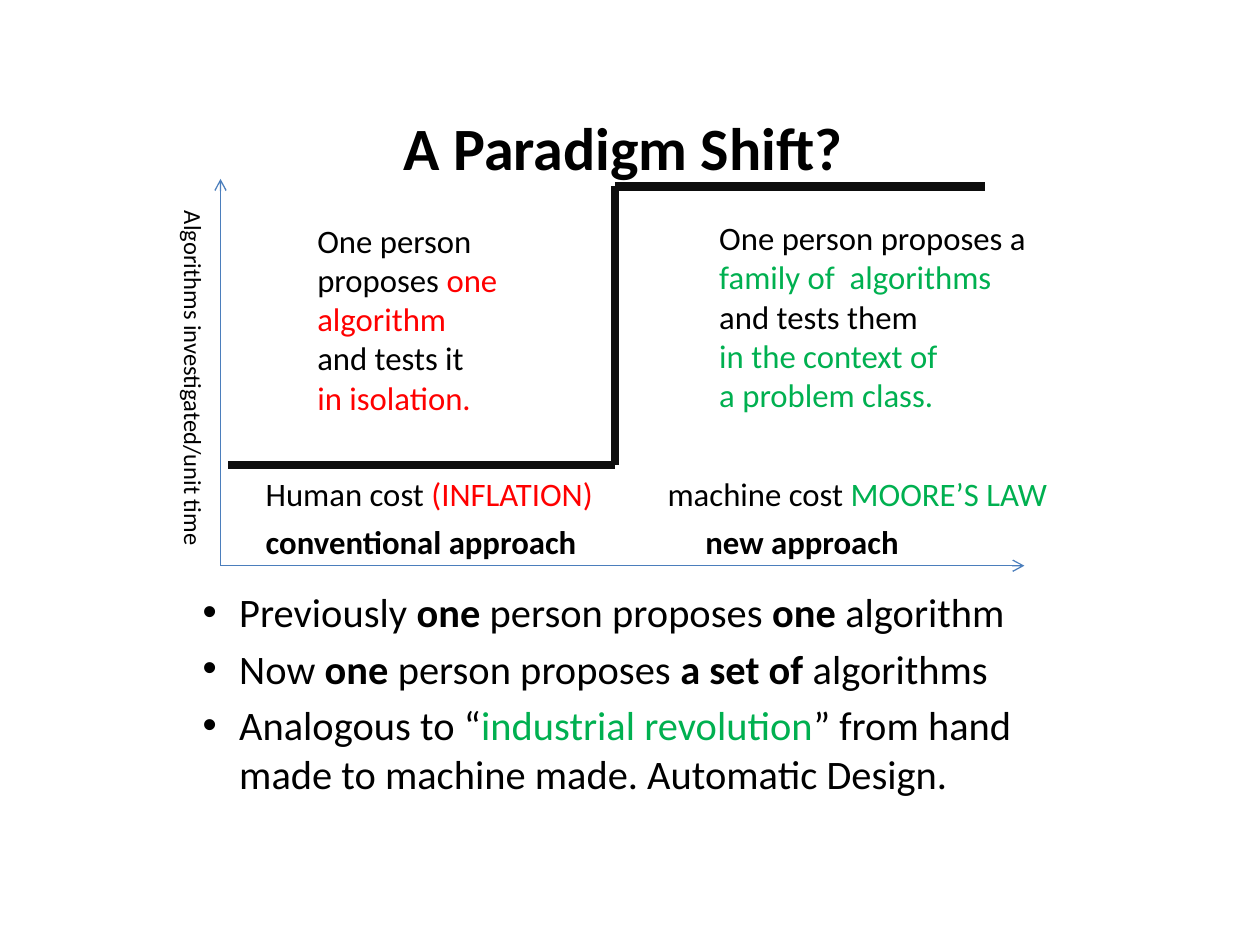
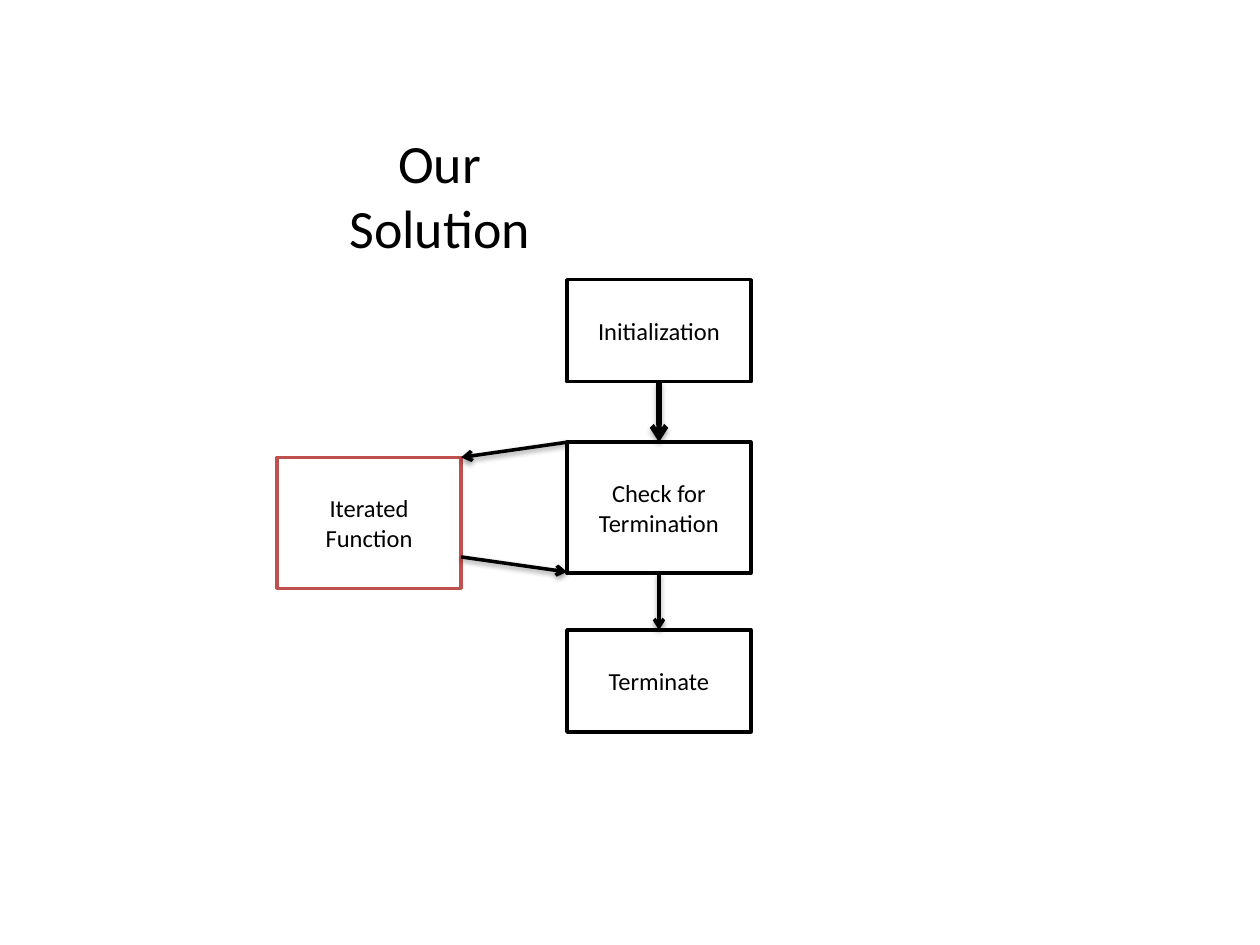
from dataclasses import dataclass

from lxml import etree
from pptx import Presentation
from pptx import util as u
from pptx.dml.color import RGBColor
from pptx.enum import shapes, text
from pptx.oxml import ns


@dataclass(frozen=True)
class Theme:
    font: str = "Calibri"
    black: str = "000000"
    white: str = "FFFFFF"
    red: str = "FF0000"
    green: str = "00B050"
    axis: str = "4B7EBC"
    step: str = "0D0D0D"
    accent: str = "C0504D"
    shift_title: float = 34.3
    solution_title: float = 30.8
    body: float = 23.1
    note: float = 18.7
    label: float = 14


THEME = Theme()
LEFT, CENTER = text.PP_ALIGN.LEFT, text.PP_ALIGN.CENTER
TOP, MIDDLE = text.MSO_ANCHOR.TOP, text.MSO_ANCHOR.MIDDLE

# Content: a paragraph is a list of (words, style), style being "", "bold", "red" or "green"
SHIFT_TITLE = [[("A Paradigm Shift?", "bold")]]
AXIS_LABEL = [[("Algorithms investigated/unit time", "")]]
CONVENTIONAL = [
    [("One person", "")],
    [("proposes ", ""), ("one", "red")],
    [("algorithm", "red")],
    [("and tests it", "")],
    [("in isolation.", "red")],
]
NEW = [
    [("One person proposes a", "")],
    [("family of  algorithms", "green")],
    [("and tests them", "")],
    [("in the context of", "green")],
    [("a problem class.", "green")],
]
COSTS = [[("Human cost ", ""), ("(INFLATION)", "red"),
          ("\tmachine cost ", ""), ("MOORE’S LAW", "green")]]
APPROACHES = [[("conventional approach\tnew approach", "bold")]]
POINTS = [
    [("Previously ", ""), ("one", "bold"), (" person proposes ", ""),
     ("one", "bold"), (" algorithm", "")],
    [("Now ", ""), ("one", "bold"), (" person proposes ", ""),
     ("a set of ", "bold"), ("algorithms", "")],
    [("Analogous to “", ""), ("industrial revolution", "green"),
     ("” from hand made to machine made. Automatic Design.", "")],
]

# Diagram geometry in inches
AXIS_ORIGIN, AXIS_RIGHT, AXIS_TOP = (1.75, 4.49), (8.13, 4.49), (1.75, 1.42)
STEP_POINTS = [(1.81, 3.69), (4.88, 3.69), (4.88, 1.48), (7.82, 1.48)]

SOLUTION_TITLE = [[("Our Solution", "")]]
BOX_WIDTH, MAIN_LEFT, LOOP_LEFT = 1.46, 4.5, 2.2
# Stage: left, top, height, outline
STAGES = {
    "Initialization": (MAIN_LEFT, 2.22, 0.81, THEME.black),
    "Check for Termination": (MAIN_LEFT, 3.51, 1.04, THEME.black),
    "Terminate": (MAIN_LEFT, 5, 0.81, THEME.black),
    "Iterated Function": (LOOP_LEFT, 3.63, 1.04, THEME.accent),
}
# Arrow: stage and fraction across and down its box at each end, weight, shadow (opacity %, distance)
FLOWS = [
    ("Initialization", (0.5, 1), "Check for Termination", (0.5, 0), 3, (35, 1.8)),
    ("Check for Termination", (0.5, 1), "Terminate", (0.5, 0), 2, (38, 1.6)),
    ("Check for Termination", (0, 0), "Iterated Function", (1, 0), 2, (38, 1.6)),
    ("Iterated Function", (1, 0.76), "Check for Termination", (0, 0.99), 2, (38, 1.6)),
]


def rgb(colour):
    return RGBColor.from_string(colour)


def add_xml(parent, tag, **attributes):
    return etree.SubElement(parent, ns.qn(tag), attributes)


def write(frame, paragraphs, size, align=LEFT, anchor=TOP, bullet=False, tab=None):
    frame.word_wrap = True
    frame.vertical_anchor = anchor
    for number, pieces in enumerate(paragraphs):
        para = frame.paragraphs[0] if number == 0 else frame.add_paragraph()
        para.alignment = align
        props = para._p.get_or_add_pPr()
        if bullet:
            indent = u.Inches(0.29)
            props.set("marL", str(indent))
            props.set("indent", str(-indent))
            para.space_before = u.Pt(size * 0.2)
            add_xml(props, "a:buFont", typeface="Arial")
            add_xml(props, "a:buChar", char="•")
        if tab:
            stops = add_xml(props, "a:tabLst")
            add_xml(stops, "a:tab", pos=str(u.Inches(tab)), algn="l")
        para.font.name = THEME.font
        para.font.size = u.Pt(size)
        para.font.color.rgb = rgb(THEME.black)
        for words, style in pieces:
            run = para.add_run()
            run.text = words
            if style == "bold":
                run.font.bold = True
            elif style:
                run.font.color.rgb = rgb(getattr(THEME, style))


def add_text(slide, area, paragraphs, size, rotation=0, **layout):
    box = slide.shapes.add_textbox(*map(u.Inches, area))
    box.rotation = rotation
    write(box.text_frame, paragraphs, size, **layout)


def add_line(slide, start, end, colour, weight, arrow=False, shadow=None):
    line = slide.shapes.add_connector(
        shapes.MSO_CONNECTOR.STRAIGHT, *map(u.Inches, (*start, *end)))
    line.line.color.rgb = rgb(colour)
    line.line.width = u.Pt(weight)
    if arrow:
        add_xml(line.line._get_or_add_ln(), "a:tailEnd", type="arrow")
    effects = add_xml(line._element.spPr, "a:effectLst")
    if shadow:
        opacity, distance = shadow
        cast = add_xml(effects, "a:outerShdw", blurRad=str(u.Pt(3.1)),
                       dist=str(u.Pt(distance)), dir="5400000", rotWithShape="0")
        tint = add_xml(cast, "a:srgbClr", val=THEME.black)
        add_xml(tint, "a:alpha", val=str(opacity * 1000))


def build_shift(slide):
    add_text(slide, (1.44, 0.68, 7.01, 0.97), SHIFT_TITLE, THEME.shift_title,
             align=CENTER, anchor=MIDDLE)
    # Axes and the step between the two approaches
    for end in (AXIS_RIGHT, AXIS_TOP):
        add_line(slide, AXIS_ORIGIN, end, THEME.axis, 0.75, arrow=True)
    for start, end in zip(STEP_POINTS, STEP_POINTS[1:]):
        add_line(slide, start, end, THEME.step, 5)
    # Texts in the diagram
    add_text(slide, (2.01, 4.09, 5.69, 0.42), APPROACHES, THEME.note, tab=3.49)
    add_text(slide, (0.09, 2.85, 2.89, 0.34), AXIS_LABEL, THEME.label, rotation=90)
    add_text(slide, (2.42, 1.7, 1.7, 1.67), CONVENTIONAL, THEME.note)
    add_text(slide, (5.61, 1.68, 2.89, 1.67), NEW, THEME.note)
    # Points below, and the cost line
    add_text(slide, (1.51, 4.61, 7.01, 1.68), POINTS, THEME.body, bullet=True)
    add_text(slide, (2.01, 3.71, 6.71, 0.39), COSTS, THEME.note, tab=3.19)


def build_solution(slide):
    add_text(slide, (2.37, 1.06, 2.24, 0.97), SOLUTION_TITLE, THEME.solution_title,
             align=CENTER, anchor=MIDDLE)
    # Stages
    for stage, (left, top, height, outline) in STAGES.items():
        box = slide.shapes.add_shape(
            shapes.MSO_SHAPE.RECTANGLE, *map(u.Inches, (left, top, BOX_WIDTH, height)))
        box.shadow.inherit = False
        box.fill.solid()
        box.fill.fore_color.rgb = rgb(THEME.white)
        box.line.color.rgb = rgb(outline)
        box.line.width = u.Pt(2)
        write(box.text_frame, [[(stage, "")]], THEME.label, align=CENTER, anchor=MIDDLE)

    # Arrows between them
    def point(stage, across, down):
        left, top, height, _ = STAGES[stage]
        return left + across * BOX_WIDTH, top + down * height

    for source, leave, target, arrive, weight, shadow in FLOWS:
        add_line(slide, point(source, *leave), point(target, *arrive),
                 THEME.black, weight, arrow=True, shadow=shadow)


def main():
    deck = Presentation()
    deck.slide_width, deck.slide_height = u.Inches(10), u.Inches(7.5)
    for build in (build_shift, build_solution):
        build(deck.slides.add_slide(deck.slide_layouts[6]))
    deck.save("out.pptx")


if __name__ == "__main__":
    main()
